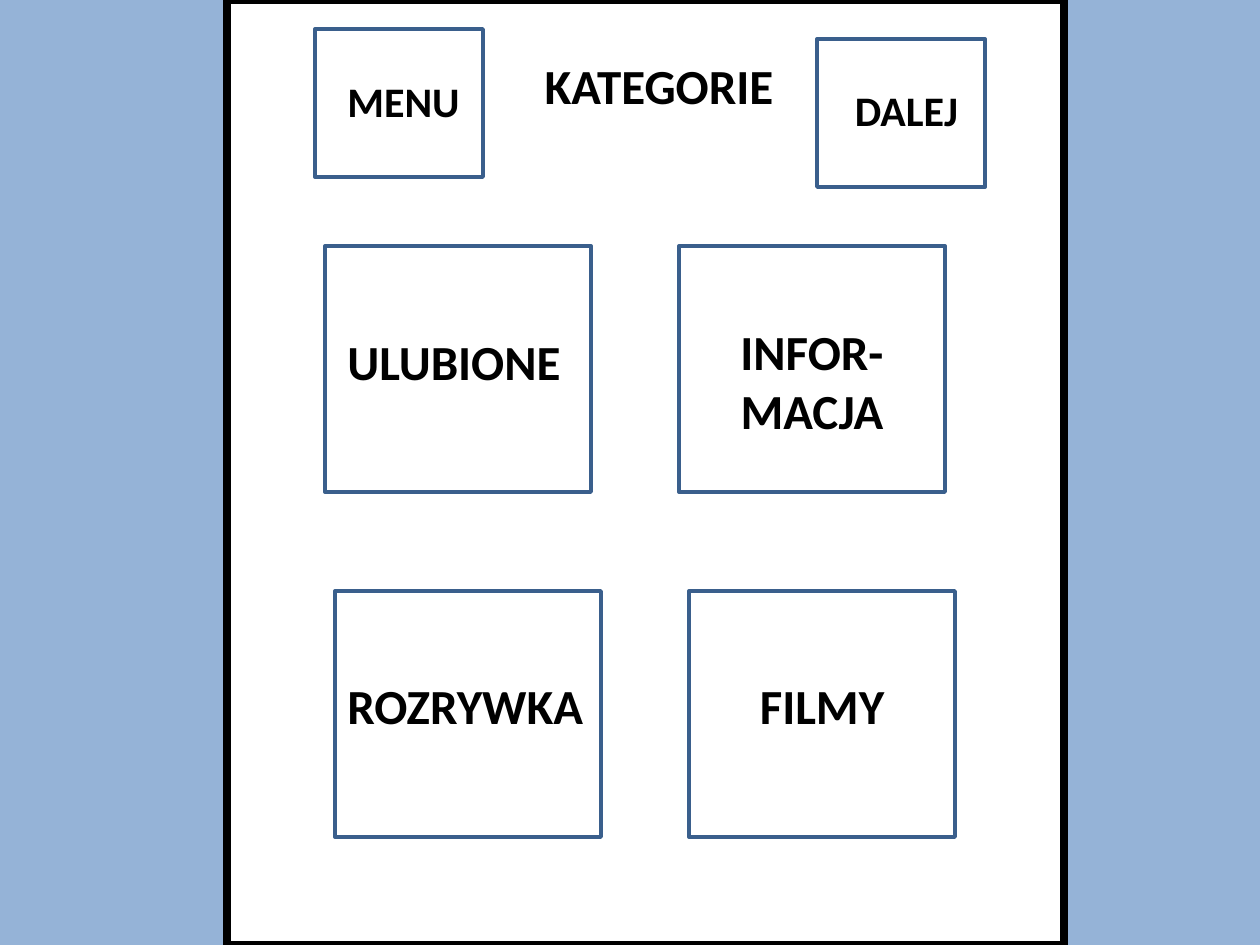
"""Builds the KATEGORIE menu slide with its navigation and category tiles."""
from pptx import Presentation
from pptx.dml.color import RGBColor
from pptx.enum.shapes import MSO_SHAPE
from pptx.enum.text import MSO_ANCHOR, MSO_AUTO_SIZE, PP_ALIGN
from pptx.util import Pt

EMU_PER_PX = 914400 / 126
SLIDE_SIZE = (1260, 945)
BACKGROUND, WHITE, BLACK, BLUE = "95B3D7", "FFFFFF", "000000", "3A5F8C"
LEFT, CENTER = PP_ALIGN.LEFT, PP_ALIGN.CENTER

PAGE = (227, 0, 837, 945)
HEADING = ("KATEGORIE", (532, 49, 256, 72), 28, LEFT)
BUTTON_SIZE = (168, 148)
BUTTON_CORNERS = [(315, 29), (817, 39)]
TILE_SIZE = (266, 246)
TILE_COLUMN_STEP = 354
TILE_ROWS = [(325, 246), (335, 591)]
LABELS = [
    ("MENU", (305, 69, 197, 63), 24, CENTER),
    ("DALEJ", (808, 78, 197, 63), 24, CENTER),
    ("ULUBIONE", (335, 325, 246, 72), 28, LEFT),
    ("INFOR-MACJA", (679, 315, 266, 131), 28, CENTER),
    ("ROZRYWKA", (335, 669, 266, 72), 28, LEFT),
    ("FILMY", (699, 669, 246, 72), 28, CENTER),
]


def px(*lengths):
    return [round(length * EMU_PER_PX) for length in lengths]


def color(hex_code):
    return RGBColor.from_string(hex_code)


def add_frame(slide, box, line, width, fill=None):
    frame = slide.shapes.add_shape(MSO_SHAPE.RECTANGLE, *px(*box))
    frame.shadow.inherit = False
    if fill:
        frame.fill.solid()
        frame.fill.fore_color.rgb = color(fill)
    else:
        frame.fill.background()
    frame.line.color.rgb = color(line)
    frame.line.width = Pt(width)


def write_label(holder, label):
    text, box, size, align = label
    holder.left, holder.top, holder.width, holder.height = px(*box)
    frame = holder.text_frame
    frame.text = text
    frame.word_wrap = True
    frame.auto_size = MSO_AUTO_SIZE.NONE
    frame.vertical_anchor = MSO_ANCHOR.TOP
    paragraph = frame.paragraphs[0]
    paragraph.alignment = align
    font = paragraph.runs[0].font
    font.name, font.size, font.bold = "Calibri", Pt(size), True
    font.color.rgb = color(BLACK)


def main():
    deck = Presentation()
    deck.slide_width, deck.slide_height = px(*SLIDE_SIZE)
    slide = deck.slides.add_slide(deck.slide_layouts[5])
    slide.background.fill.solid()
    slide.background.fill.fore_color.rgb = color(BACKGROUND)

    add_frame(slide, PAGE, BLACK, 4.5, WHITE)
    for corner in BUTTON_CORNERS:
        add_frame(slide, corner + BUTTON_SIZE, BLUE, 2.25)
    for left, top in TILE_ROWS:
        for column in range(2):
            corner = (left + column * TILE_COLUMN_STEP, top)
            add_frame(slide, corner + TILE_SIZE, BLUE, 2.25)

    heading = slide.shapes.title
    slide.shapes._spTree.append(heading._element)
    write_label(heading, HEADING)
    for label in LABELS:
        write_label(slide.shapes.add_textbox(*px(*label[1])), label)

    deck.save("out.pptx")


if __name__ == "__main__":
    main()
